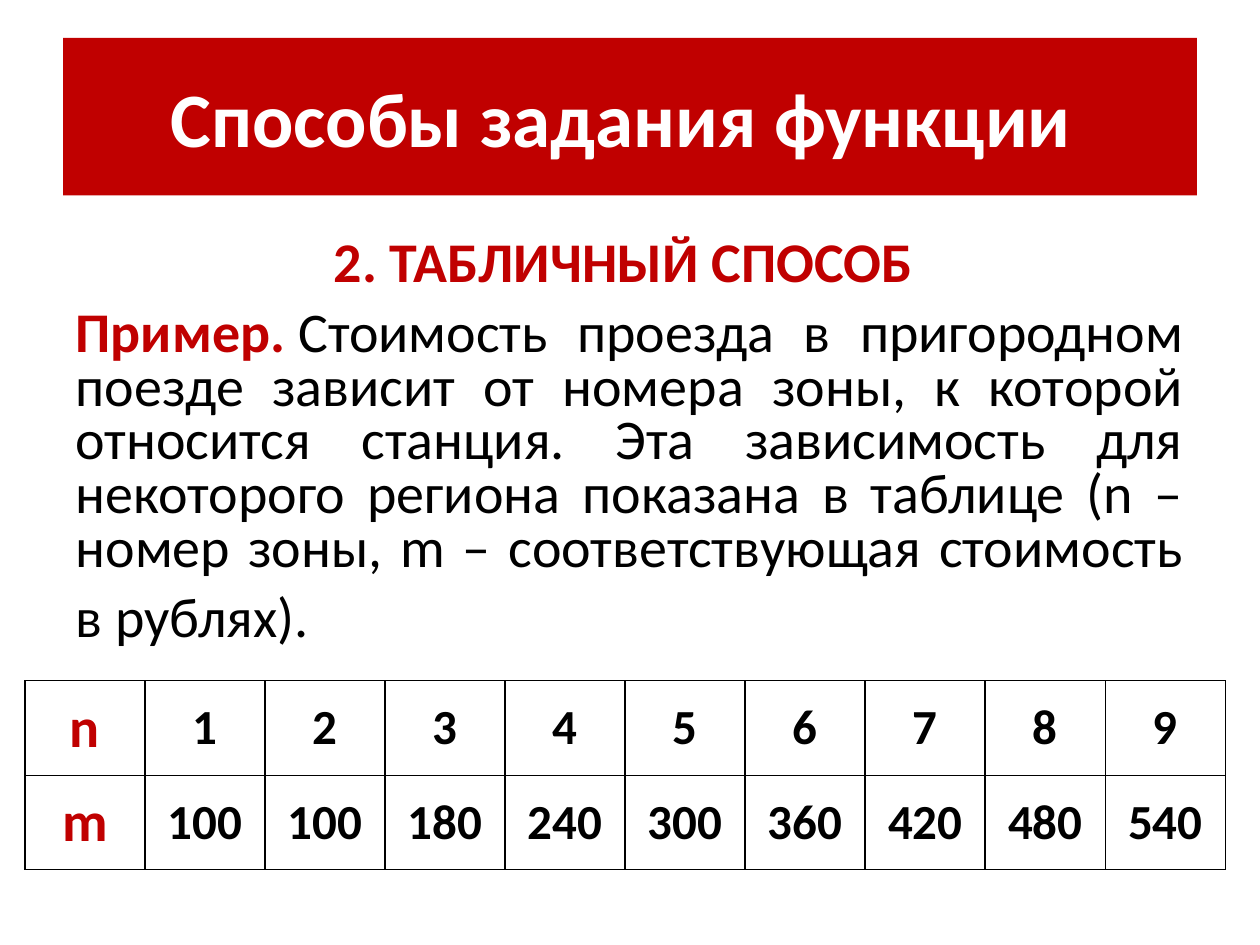
from dataclasses import dataclass

from lxml.etree import SubElement
from pptx import Presentation
from pptx.dml.color import RGBColor
from pptx.enum.text import MSO_ANCHOR, MSO_AUTO_SIZE, PP_ALIGN
from pptx.oxml.ns import qn
from pptx.util import Pt


@dataclass(frozen=True)
class Theme:
    font: str = "Calibri"
    red: RGBColor = RGBColor(0xC0, 0x00, 0x00)
    black: RGBColor = RGBColor(0x00, 0x00, 0x00)
    white: RGBColor = RGBColor(0xFF, 0xFF, 0xFF)
    title_size: int = 44
    body_size: int = 32
    cell_size: int = 28


theme = Theme()


def format_run(run, size, color, bold=True):
    run.font.name = theme.font
    run.font.size = Pt(size)
    run.font.bold = bold
    run.font.color.rgb = color


def add_borders(cell):
    properties = cell._tc.get_or_add_tcPr()
    for side in ("a:lnL", "a:lnR", "a:lnT", "a:lnB"):
        line = SubElement(properties, qn(side), w=str(Pt(1)))
        fill = SubElement(line, qn("a:solidFill"))
        SubElement(fill, qn("a:srgbClr"), val=str(theme.black))


presentation = Presentation()
presentation.slide_width = Pt(720)
presentation.slide_height = Pt(540)
slide = presentation.slides.add_slide(presentation.slide_layouts[1])

title = slide.shapes.title
title.left, title.top, title.width, title.height = Pt(36), Pt(21.6), Pt(648), Pt(90)
title.fill.solid()
title.fill.fore_color.rgb = theme.red
title.text_frame.text = "Способы задания функции "
title.text_frame.vertical_anchor = MSO_ANCHOR.MIDDLE
title_paragraph = title.text_frame.paragraphs[0]
title_paragraph.alignment = PP_ALIGN.CENTER
format_run(title_paragraph.runs[0], theme.title_size, theme.white)

body = slide.placeholders[1]
body.left, body.top, body.width, body.height = Pt(36), Pt(126), Pt(648), Pt(356.4)
body.text_frame.auto_size = MSO_AUTO_SIZE.NONE
body.text_frame.text = "2. ТАБЛИЧНЫЙ СПОСОБ "
heading = body.text_frame.paragraphs[0]
heading.alignment = PP_ALIGN.CENTER
format_run(heading.runs[0], theme.body_size, theme.red)

example = body.text_frame.add_paragraph()
example.alignment = PP_ALIGN.JUSTIFY
example.line_spacing = 0.8
example_runs = [
    ("Пример.\N{NO-BREAK SPACE}", theme.body_size, theme.red, True),
    (
        "Стоимость проезда в пригородном поезде зависит от номера зоны, "
        "к которой относится станция. Эта зависимость для некоторого региона "
        "показана в таблице (n – номер зоны, m – соответствующая стоимость в рублях).",
        theme.body_size, theme.black, False,
    ),
    ("\N{NO-BREAK SPACE}", theme.title_size, theme.red, True),
]
for text, size, color, bold in example_runs:
    run = example.add_run()
    run.text = text
    format_run(run, size, color, bold)

for paragraph, margin in ((heading, 40), (example, 0)):
    properties = paragraph._p.get_or_add_pPr()
    properties.set("marL", str(Pt(margin)))
    properties.set("indent", str(-Pt(margin)))
    SubElement(properties, qn("a:buNone"))

fares = [
    ["n", 1, 2, 3, 4, 5, 6, 7, 8, 9],
    ["m", 100, 100, 180, 240, 300, 360, 420, 480, 540],
]
table = slide.shapes.add_table(
    len(fares), len(fares[0]), Pt(14.2), Pt(389), Pt(686), Pt(108)
).table
table.first_row = False
table.horz_banding = False
for column in table.columns:
    column.width = Pt(68.6)
for row_index, values in enumerate(fares):
    for column_index, value in enumerate(values):
        cell = table.cell(row_index, column_index)
        add_borders(cell)
        cell.fill.background()
        cell.vertical_anchor = MSO_ANCHOR.MIDDLE
        cell.text_frame.text = str(value)
        paragraph = cell.text_frame.paragraphs[0]
        paragraph.alignment = PP_ALIGN.CENTER
        if column_index == 0:
            format_run(paragraph.runs[0], theme.body_size, theme.red)
        else:
            format_run(paragraph.runs[0], theme.cell_size, theme.black)

presentation.save("out.pptx")
